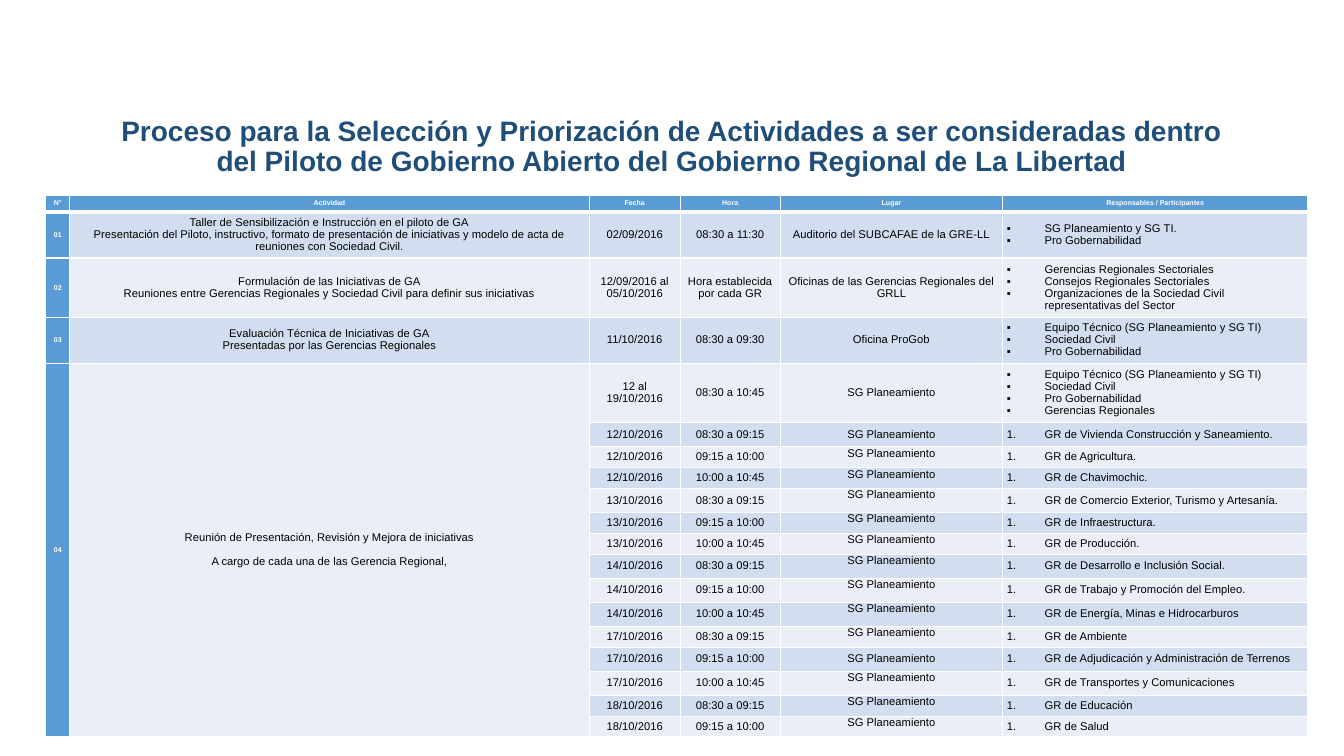
"""Build the slide with the selection and prioritisation schedule of the open government pilot."""
from dataclasses import dataclass

from lxml import etree
from pptx import Presentation
from pptx import util as u
from pptx.dml.color import RGBColor
from pptx.enum import text
from pptx.oxml.ns import qn


@dataclass(frozen=True)
class Theme:
    font: str = "Arial"
    title_color: str = "1F4E79"
    header_fill: str = "5B9BD5"
    band_fills: tuple = ("EAEFF7", "D2DEEF")
    white: str = "FFFFFF"
    black: str = "000000"
    title_size: float = 20
    label_size: float = 5
    body_size: float = 8


THEME = Theme()
CENTER = text.PP_ALIGN.CENTER
LEFT = text.PP_ALIGN.LEFT
MIDDLE = text.MSO_ANCHOR.MIDDLE
TOP = text.MSO_ANCHOR.TOP

TITLE = ("Proceso para la Selección y Priorización de Actividades a ser consideradas dentro "
         "del Piloto de Gobierno Abierto del Gobierno Regional de La Libertad")
HEADERS = ["N°", "Actividad", "Fecha", "Hora", "Lugar", "Responsables / Participantes"]
COLUMN_WIDTHS = [17.2, 371, 65, 71.4, 159, 218]
INSETS = [2.9, 2.9, 2.9, 0.7, 0.7, 2.9]
HEADER_HEIGHT, SHORT, MEDIUM, TALL, TALLEST = 11.6, 14.3, 17.2, 31.5, 40.2
PLACE = "SG Planeamiento"
TEAM = ["Equipo Técnico (SG Planeamiento y SG TI)", "Sociedad Civil", "Pro Gobernabilidad"]
STAGES = [
    (TALL, ["01"],
     ["Taller de Sensibilización e Instrucción en el piloto de GA",
      "Presentación del Piloto, instructivo, formato de presentación de iniciativas y modelo "
      "de acta de reuniones con Sociedad Civil."],
     ["02/09/2016"], ["08:30 a 11:30"], ["Auditorio del SUBCAFAE de la GRE-LL"],
     ["SG Planeamiento y SG TI.", "Pro Gobernabilidad"]),
    (TALLEST, ["02"],
     ["Formulación de las Iniciativas de GA",
      "Reuniones entre Gerencias Regionales y Sociedad Civil para definir sus iniciativas"],
     ["12/09/2016 al", "05/10/2016"], ["Hora establecida por cada GR"],
     ["Oficinas de las Gerencias Regionales del GRLL"],
     ["Gerencias Regionales Sectoriales", "Consejos Regionales Sectoriales",
      "Organizaciones de la Sociedad Civil representativas del Sector"]),
    (TALL, ["03"],
     ["Evaluación Técnica de Iniciativas de GA", "Presentadas por las Gerencias Regionales"],
     ["11/10/2016"], ["08:30 a 09:30"], ["Oficina ProGob"], TEAM),
    (TALLEST, ["04"],
     ["Reunión de Presentación, Revisión y Mejora de iniciativas",
      "A cargo de cada una de las Gerencia Regional,"],
     ["12 al 19/10/2016"], ["08:30 a 10:45"], [PLACE], TEAM + ["Gerencias Regionales"]),
]
MEETING_DAYS = [12, 13, 14, 17, 18]
MEETING_HOURS = ["08:30 a 09:15", "09:15 a 10:00", "10:00 a 10:45"]
MEETINGS = [
    (MEDIUM, MIDDLE, "GR de Vivienda Construcción y Saneamiento."),
    (SHORT, TOP, "GR de Agricultura."),
    (SHORT, TOP, "GR de Chavimochic."),
    (MEDIUM, TOP, "GR de Comercio Exterior, Turismo y Artesanía."),
    (SHORT, TOP, "GR de Infraestructura."),
    (SHORT, TOP, "GR de Producción."),
    (MEDIUM, TOP, "GR de Desarrollo e Inclusión Social."),
    (MEDIUM, TOP, "GR de Trabajo y Promoción del Empleo."),
    (MEDIUM, TOP, "GR de Energía, Minas e Hidrocarburos"),
    (SHORT, TOP, "GR de Ambiente"),
    (MEDIUM, MIDDLE, "GR de Adjudicación y Administración de Terrenos"),
    (MEDIUM, TOP, "GR de Transportes y Comunicaciones"),
    (SHORT, TOP, "GR de Educación"),
    (SHORT, TOP, "GR de Salud"),
]


def add_span(para, words, size, color, bold):
    """Add one formatted run to a paragraph."""
    span = para.add_run()
    span.text = words
    span.font.name = THEME.font
    span.font.size = u.Pt(size)
    span.font.bold = bold
    span.font.color.rgb = RGBColor.from_string(color)


def add_bullet(para, tag, **attributes):
    """Give a paragraph a hanging indent with a bullet or number."""
    properties = para._p.get_or_add_pPr()
    properties.set("marL", str(u.Pt(27)))
    properties.set("indent", str(-u.Pt(27)))
    if tag == "a:buChar":
        etree.SubElement(properties, qn("a:buFont"), typeface=THEME.font)
    etree.SubElement(properties, qn(tag), **attributes)


def set_borders(cell, row):
    """Draw white borders, with a thick one under the header row."""
    widths = {"L": 1, "R": 1, "T": 3 if row == 1 else 1, "B": 3 if row == 0 else 1}
    properties = cell._tc.get_or_add_tcPr()
    for side, width in widths.items():
        line = etree.SubElement(properties, qn(f"a:ln{side}"), w=str(u.Pt(width)))
        fill = etree.SubElement(line, qn("a:solidFill"))
        etree.SubElement(fill, qn("a:srgbClr"), val=THEME.white)


def style_cell(cell, row, column):
    """Set the borders, fill, insets and anchor of a cell."""
    set_borders(cell, row)
    label = row == 0 or column == 0
    color = THEME.header_fill if label else THEME.band_fills[row % 2]
    cell.fill.solid()
    cell.fill.fore_color.rgb = RGBColor.from_string(color)
    inset = u.Pt(INSETS[column])
    cell.margin_left = cell.margin_right = cell.margin_top = cell.margin_bottom = inset
    cell.vertical_anchor = MIDDLE


def fill_cell(cell, lines, label=False, spacing=0.95, gap=0, bullet=None):
    """Write the lines of a cell, one paragraph each."""
    size, color = (THEME.label_size, THEME.white) if label else (THEME.body_size, THEME.black)
    frame = cell.text_frame
    for index, words in enumerate(lines):
        para = frame.add_paragraph() if index else frame.paragraphs[0]
        para.alignment = LEFT if bullet else CENTER
        para.line_spacing = spacing
        if index and gap:
            para.space_before = u.Pt(gap)
        if bullet:
            add_bullet(para, **bullet)
        add_span(para, words, size, color, label)


def add_title(page):
    """Add the centred title."""
    box = page.shapes.add_textbox(u.Pt(66), u.Pt(66), u.Pt(828), u.Pt(79))
    frame = box.text_frame
    frame.word_wrap = True
    frame.vertical_anchor = MIDDLE
    para = frame.paragraphs[0]
    para.alignment = CENTER
    para.line_spacing = 0.9
    add_span(para, TITLE, THEME.title_size, THEME.title_color, True)


def add_schedule(page):
    """Add the empty styled table with its column widths and row heights."""
    heights = [HEADER_HEIGHT] + [entry[0] for entry in STAGES + MEETINGS]
    table = page.shapes.add_table(len(heights), len(HEADERS), u.Pt(32.7), u.Pt(139.6),
                                  u.Pt(sum(COLUMN_WIDTHS)), u.Pt(sum(heights))).table
    table.horz_banding = False
    for column, width in zip(table.columns, COLUMN_WIDTHS):
        column.width = u.Pt(width)
    for row, height in enumerate(heights):
        table.rows[row].height = u.Pt(height)
        for column in range(len(HEADERS)):
            style_cell(table.cell(row, column), row, column)
    return table


def fill_stages(table):
    """Write the header row and the four numbered stages."""
    for column, words in enumerate(HEADERS):
        fill_cell(table.cell(0, column), [words], label=True)
    for row, (_, number, *details, people) in enumerate(STAGES, 1):
        fill_cell(table.cell(row, 0), number, label=True, spacing=1.07)
        for column, lines in enumerate(details, 1):
            gap = 8.7 if row == len(STAGES) and column == 1 else 0
            fill_cell(table.cell(row, column), lines, gap=gap)
        fill_cell(table.cell(row, 5), people, bullet={"tag": "a:buChar", "char": "▪"})


def fill_meetings(table):
    """Write the meetings of the last stage, three a day."""
    first = len(STAGES) + 1
    for index, (_, anchor, office) in enumerate(MEETINGS):
        row = first + index
        day, slot = divmod(index, len(MEETING_HOURS))
        fill_cell(table.cell(row, 2), [f"{MEETING_DAYS[day]}/10/2016"])
        fill_cell(table.cell(row, 3), [MEETING_HOURS[slot]])
        fill_cell(table.cell(row, 4), [PLACE])
        table.cell(row, 4).vertical_anchor = anchor
        fill_cell(table.cell(row, 5), [office],
                  bullet={"tag": "a:buAutoNum", "type": "arabicPeriod"})
    for column in (0, 1):
        table.cell(len(STAGES), column).merge(table.cell(len(STAGES) + len(MEETINGS), column))


def main():
    """Build and save the deck."""
    deck = Presentation()
    deck.slide_width, deck.slide_height = u.Pt(960), u.Pt(540)
    page = deck.slides.add_slide(deck.slide_layouts[6])
    add_title(page)
    table = add_schedule(page)
    fill_stages(table)
    fill_meetings(table)
    deck.save("out.pptx")


if __name__ == "__main__":
    main()
